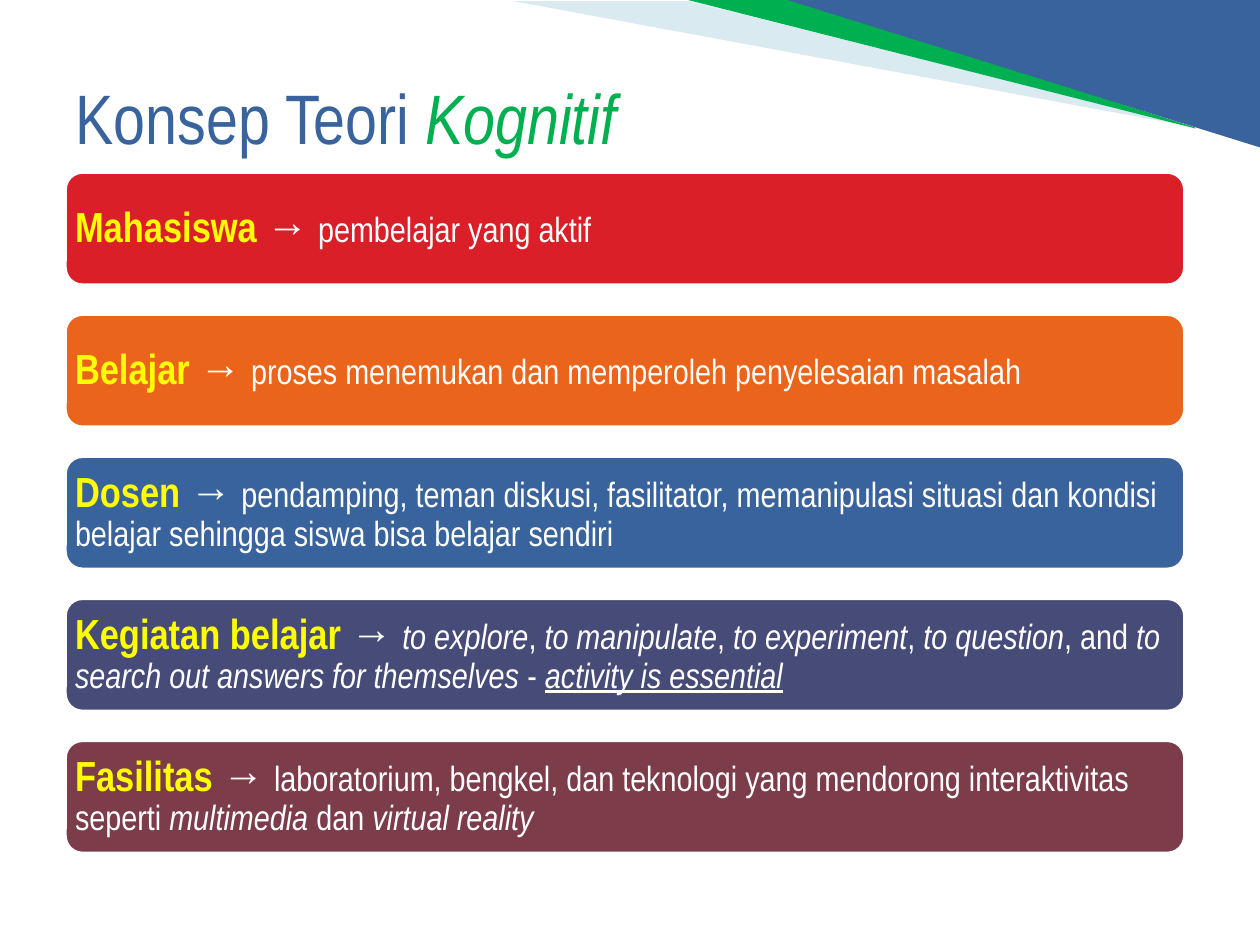
import pptx
import pptx.dml.color
import pptx.enum.shapes
import pptx.enum.text
import pptx.oxml
import pptx.oxml.ns
import pptx.util

Inches = pptx.util.Inches
RGBColor = pptx.dml.color.RGBColor
MSO_SHAPE = pptx.enum.shapes.MSO_SHAPE

WHITE = RGBColor(0xFF, 0xFF, 0xFF)
YELLOW = RGBColor(0xFF, 0xFF, 0x00)
BLUE = RGBColor(0x39, 0x63, 0x9D)
GREEN = RGBColor(0x00, 0xB0, 0x50)
PALE_BLUE = RGBColor(0xA0, 0xCB, 0xDC)
RED = RGBColor(0xDA, 0x1F, 0x28)
ORANGE = RGBColor(0xEB, 0x64, 0x1B)
INDIGO = RGBColor(0x47, 0x4B, 0x78)
MAROON = RGBColor(0x7D, 0x3C, 0x4A)


def add_text(paragraph, text, size=20, color=WHITE, bold=False, italic=False, underline=False):
    run = paragraph.add_run()
    run.text = text
    run.font.name = "Arial Narrow"
    run.font.size = pptx.util.Pt(size)
    run.font.color.rgb = color
    run.font.bold = bold
    run.font.italic = italic
    run.font.underline = underline


def fill_shape(shape, color):
    shape.shadow.inherit = False
    shape.fill.solid()
    shape.fill.fore_color.rgb = color
    shape.line.fill.background()


presentation = pptx.Presentation()
presentation.slide_width = Inches(10)
presentation.slide_height = Inches(7.5)
slide = presentation.slides.add_slide(presentation.slide_layouts[5])
shapes = slide.shapes

ribbons = [
    (PALE_BLUE, [(9.48, 1.01), (4.08, 0.01), (5.47, 0.01)]),
    (GREEN, [(9.49, 1.02), (5.46, 0), (6.31, 0), (9.48, 1.01)]),
]
for color, points in ribbons:
    corners = [(Inches(x), Inches(y)) for x, y in points]
    builder = shapes.build_freeform(*corners[0])
    builder.add_line_segments(corners[1:], close=True)
    ribbon = builder.convert_to_shape()
    fill_shape(ribbon, color)
    if color == PALE_BLUE:
        color_element = ribbon.fill._xPr.find(".//" + pptx.oxml.ns.qn("a:srgbClr"))
        alpha = pptx.oxml.parse_xml(
            '<a:alpha %s val="40000"/>' % pptx.oxml.ns.nsdecls("a")
        )
        color_element.append(alpha)

corner = shapes.add_shape(
    MSO_SHAPE.RIGHT_TRIANGLE, Inches(6.25), Inches(0), Inches(3.75), Inches(1.17)
)
corner.rotation = 180
fill_shape(corner, BLUE)

title = shapes.title
title.left, title.top = Inches(0.5), Inches(0.3)
title.width, title.height = Inches(9), Inches(1.25)
title.text_frame.vertical_anchor = pptx.enum.text.MSO_ANCHOR.MIDDLE
title_paragraph = title.text_frame.paragraphs[0]
title_paragraph.alignment = pptx.enum.text.PP_ALIGN.LEFT
add_text(title_paragraph, "Konsep Teori ", size=40, color=BLUE)
add_text(title_paragraph, "Kognitif", size=40, color=GREEN, italic=True)

ITALIC = {"italic": True}
concepts = [
    (RED, "Mahasiswa ", [("pembelajar yang aktif", {})]),
    (ORANGE, "Belajar ", [("proses menemukan dan memperoleh penyelesaian masalah", {})]),
    (BLUE, "Dosen ", [
        ("pendamping, teman diskusi, fasilitator, memanipulasi situasi dan kondisi "
         "belajar sehingga siswa bisa belajar sendiri", {}),
    ]),
    (INDIGO, "Kegiatan belajar ", [
        ("to explore", ITALIC), (", ", {}),
        ("to manipulate", ITALIC), (", ", {}),
        ("to experiment", ITALIC), (", ", {}),
        ("to question", ITALIC), (", and ", {}),
        ("to search out answers for themselves ", ITALIC), ("- ", {}),
        ("activity is essential", {"italic": True, "underline": True}),
    ]),
    (MAROON, "Fasilitas ", [
        ("laboratorium, bengkel, dan teknologi yang mendorong interaktivitas seperti ", {}),
        ("multimedia ", ITALIC), ("dan ", {}), ("virtual reality", ITALIC),
    ]),
]
first_top, last_top = 1.35, 5.86
pitch = (last_top - first_top) / (len(concepts) - 1)
for index, (color, term, description) in enumerate(concepts):
    bar = shapes.add_shape(
        MSO_SHAPE.ROUNDED_RECTANGLE,
        Inches(0.5), Inches(first_top + index * pitch), Inches(8.92), Inches(0.93),
    )
    fill_shape(bar, color)
    bar.line.color.rgb = WHITE
    bar.line.width = pptx.util.Pt(4.33)
    frame = bar.text_frame
    frame.word_wrap = True
    frame.vertical_anchor = pptx.enum.text.MSO_ANCHOR.MIDDLE
    frame.margin_left = frame.margin_right = Inches(0.05)
    frame.margin_top = frame.margin_bottom = Inches(0.05)
    paragraph = frame.paragraphs[0]
    paragraph.alignment = pptx.enum.text.PP_ALIGN.LEFT
    paragraph.line_spacing = 0.9
    add_text(paragraph, term, size=24, color=YELLOW, bold=True)
    add_text(paragraph, "→ ", size=24, bold=True)
    for text, text_format in description:
        add_text(paragraph, text, **text_format)

presentation.save("out.pptx")
